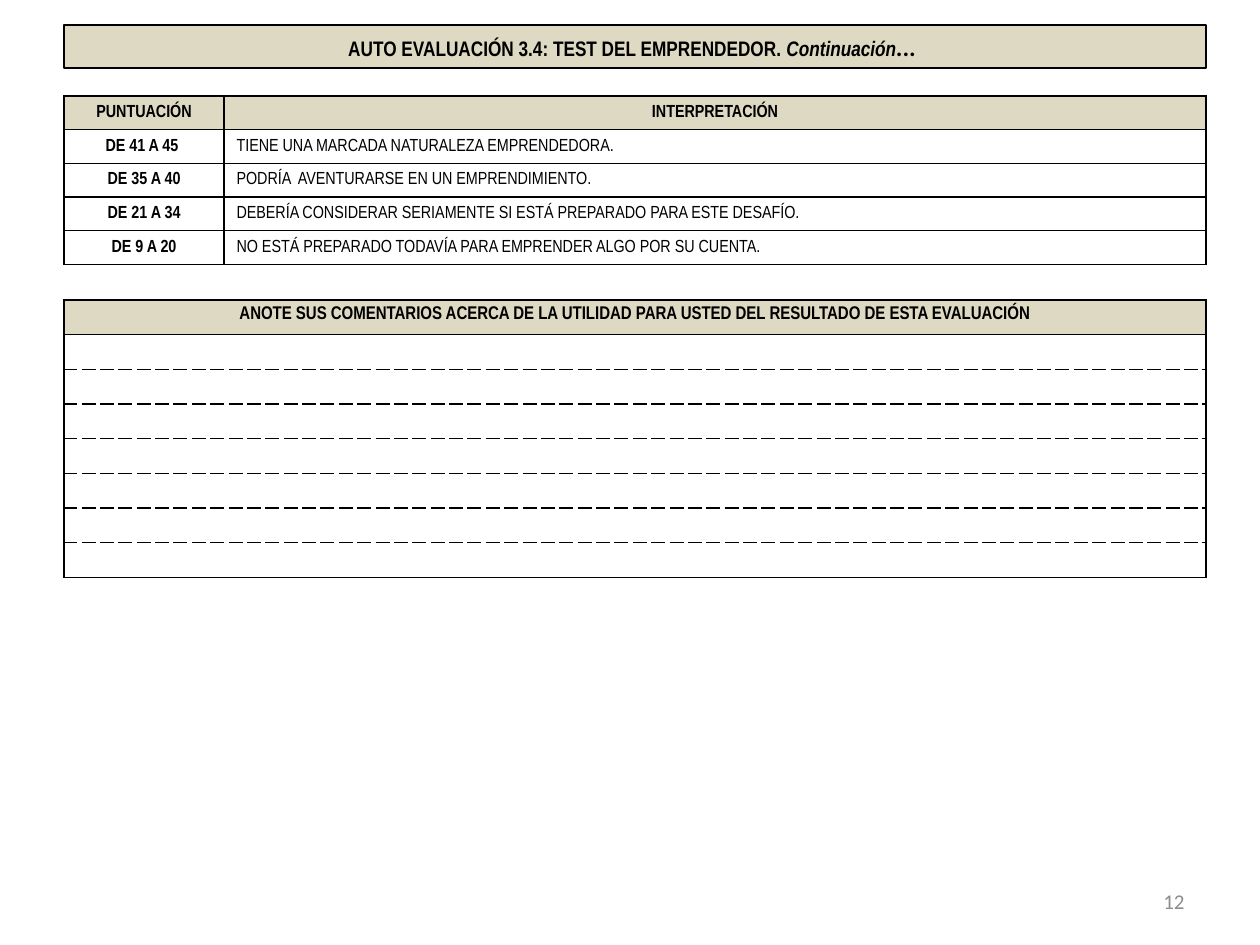
from lxml import etree
from pptx import Presentation, util as u
from pptx.dml.color import RGBColor
from pptx.enum import shapes, text
from pptx.oxml.ns import qn

PX_PER_INCH = 126
BLACK = RGBColor(0x00, 0x00, 0x00)
WHITE = RGBColor(0xFF, 0xFF, 0xFF)
SAND = RGBColor(0xDD, 0xD9, 0xC3)
GRAY = RGBColor(0x8C, 0x8C, 0x8C)
NARROW = "Arial Narrow"
CALIBRI = "Calibri"
CENTER = text.PP_ALIGN.CENTER

SCORES = [
    ("DE 41 A 45 ", "TIENE UNA MARCADA NATURALEZA EMPRENDEDORA."),
    ("DE 35 A 40", "PODRÍA  AVENTURARSE EN UN EMPRENDIMIENTO."),
    ("DE 21 A 34", "DEBERÍA CONSIDERAR SERIAMENTE SI ESTÁ PREPARADO PARA ESTE DESAFÍO."),
    ("DE 9 A 20", "NO ESTÁ PREPARADO TODAVÍA PARA EMPRENDER ALGO POR SU CUENTA."),
]
COMMENT_LINES = 7


def px(length):
    return u.Emu(round(length * 914400 / PX_PER_INCH))


def add_run(paragraph, wording, size, font=NARROW, color=BLACK, bold=False, italic=False):
    run = paragraph.add_run()
    run.text = wording
    run.font.name = font
    run.font.size = u.Pt(size)
    run.font.bold = bold
    run.font.italic = italic
    run.font.color.rgb = color


def set_borders(cell, dashed=""):
    """Give the cell 1 pt black borders; sides named in dashed (T, B) are dashed."""
    properties = cell._tc.get_or_add_tcPr()
    for index, side in enumerate("LRTB"):
        line = etree.Element(qn(f"a:ln{side}"), w=str(u.Pt(1)))
        fill = etree.SubElement(line, qn("a:solidFill"))
        etree.SubElement(fill, qn("a:srgbClr"), val=str(BLACK))
        dash = "sysDash" if side in dashed else "solid"
        etree.SubElement(line, qn("a:prstDash"), val=dash)
        properties.insert(index, line)


def add_grid(slide, box, rows, column_widths):
    """Add an unstyled table with equal rows filling the box."""
    left, top, width, height = map(px, box)
    table = slide.shapes.add_table(rows, len(column_widths), left, top, width, height).table
    table.first_row = False
    table.horz_banding = False
    for column, column_width in zip(table.columns, column_widths):
        column.width = px(column_width)
    for row in table.rows:
        row.height = height // rows
    return table


def fill_cell(cell, color, dashed=""):
    cell.fill.solid()
    cell.fill.fore_color.rgb = color
    set_borders(cell, dashed)


def add_title(slide, box):
    shape = slide.shapes.add_shape(shapes.MSO_SHAPE.RECTANGLE, *map(px, box))
    shape.shadow.inherit = False
    shape.fill.solid()
    shape.fill.fore_color.rgb = SAND
    shape.line.color.rgb = BLACK
    shape.line.width = u.Pt(0.75)
    frame = shape.text_frame
    frame.word_wrap = True
    frame.vertical_anchor = text.MSO_ANCHOR.MIDDLE
    paragraph = frame.paragraphs[0]
    paragraph.alignment = CENTER
    add_run(paragraph, "AUTO EVALUACIÓN 3.4: TEST DEL EMPRENDEDOR. ", 12, bold=True)
    add_run(paragraph, "Continuación", 12, bold=True, italic=True)
    add_run(paragraph, "... ", 14, CALIBRI, bold=True, italic=True)


def add_score_table(slide, box):
    score_width = 160
    rows = [("PUNTUACIÓN", "INTERPRETACIÓN")] + SCORES
    table = add_grid(slide, box, len(rows), [score_width, box[2] - score_width])
    for row_index, wordings in enumerate(rows):
        for column_index, wording in enumerate(wordings):
            is_header = row_index == 0
            is_label = is_header or column_index == 0
            cell = table.cell(row_index, column_index)
            fill_cell(cell, SAND if is_header else WHITE)
            cell.vertical_anchor = text.MSO_ANCHOR.MIDDLE
            paragraph = cell.text_frame.paragraphs[0]
            paragraph.alignment = CENTER if is_label else text.PP_ALIGN.JUSTIFY
            add_run(paragraph, wording, 10, bold=is_label)


def add_comment_table(slide, box):
    table = add_grid(slide, box, COMMENT_LINES + 1, [box[2]])
    header = table.cell(0, 0)
    fill_cell(header, SAND)
    paragraph = header.text_frame.paragraphs[0]
    paragraph.alignment = CENTER
    add_run(
        paragraph,
        "ANOTE SUS COMENTARIOS ACERCA DE LA UTILIDAD PARA USTED DEL RESULTADO DE ESTA EVALUACIÓN",
        10.5,
        bold=True,
    )
    for line_number in range(1, COMMENT_LINES + 1):
        cell = table.cell(line_number, 0)
        dashed = ("T" if line_number > 1 else "") + ("B" if line_number < COMMENT_LINES else "")
        fill_cell(cell, WHITE, dashed)
        # The end mark's size keeps an empty row from growing.
        paragraph = cell.text_frame.paragraphs[0]
        etree.SubElement(paragraph._p, qn("a:endParaRPr"), sz="1050")


def add_page_number(slide, box):
    frame = slide.shapes.add_textbox(*map(px, box)).text_frame
    frame.word_wrap = True
    frame.vertical_anchor = text.MSO_ANCHOR.MIDDLE
    paragraph = frame.paragraphs[0]
    paragraph.alignment = text.PP_ALIGN.RIGHT
    add_run(paragraph, "12", 12, CALIBRI, GRAY)


def main():
    presentation = Presentation()
    presentation.slide_width = px(1260)
    presentation.slide_height = px(945)
    slide = presentation.slides.add_slide(presentation.slide_layouts[6])
    left, width = 64, 1142
    add_title(slide, (left, 25, width, 43))
    add_page_number(slide, (903, 876, 294, 50))
    add_score_table(slide, (left, 96, width, 168))
    add_comment_table(slide, (left, 300, width, 272))
    presentation.save("out.pptx")


if __name__ == "__main__":
    main()
